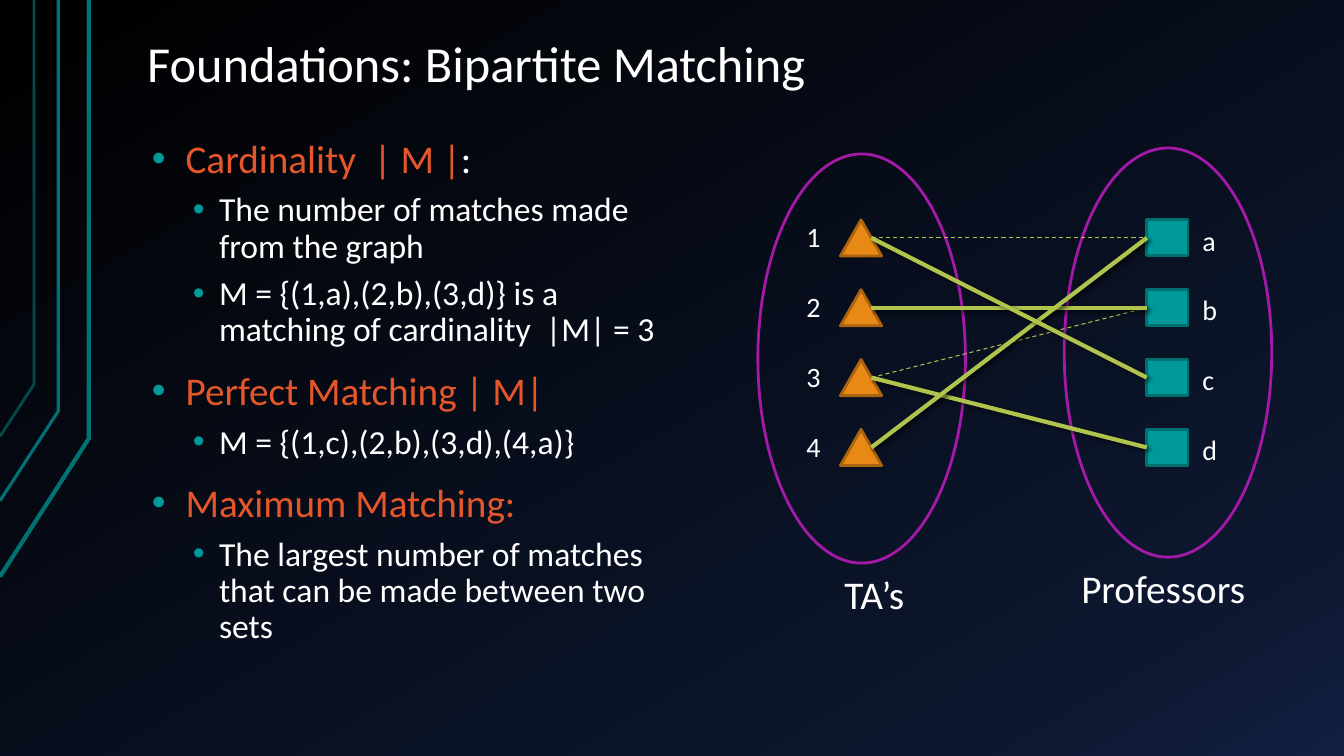
import collections
import copy

import pptx
import pptx.dml.color
import pptx.enum.dml
import pptx.enum.shapes
import pptx.enum.text
import pptx.oxml
import pptx.oxml.ns
import pptx.util
from pptx.util import Cm

Box = collections.namedtuple("Box", "left top width height")
SHAPE = pptx.enum.shapes.MSO_SHAPE
ANCHOR = pptx.enum.text.MSO_ANCHOR
FONT = "Calibri"
WHITE, ORANGE, TEAL, LIME = "FFFFFF", "E5572B", "009999", "AFC34D"

HEADING = dict(level=0, size=28, before=16, margin=0.85, hang=0.85)
DETAIL = dict(level=1, size=24, before=8, margin=1.69, hang=0.66)
POINTS = [
    (HEADING, [("Cardinality  | M |", ORANGE), (":", WHITE)]),
    (DETAIL, [("The number of matches made from the graph", WHITE)]),
    (DETAIL, [("M = {(1,a),(2,b),(3,d)} is a matching of cardinality  |M| = 3", WHITE)]),
    (HEADING, [("Perfect Matching | M|", ORANGE)]),
    (DETAIL, [("M = {(1,c),(2,b),(3,d),(4,a)}", WHITE)]),
    (HEADING, [("Maximum Matching:", ORANGE)]),
    (DETAIL, [("The largest number of matches that can be made between two sets", WHITE)]),
]
POSSIBLE_PAIRS = ["1a", "3b"]
MATCHED_PAIRS = ["2b", "3d", "4a", "1c"]


def rgb(hex_code):
    return pptx.dml.color.RGBColor.from_string(hex_code)


def drawing_xml(body):
    return pptx.oxml.parse_xml(body.replace(">", f" {pptx.oxml.ns.nsdecls('a')}>", 1))


def set_line(item, color, width):
    item.line.color.rgb = rgb(color)
    item.line.width = pptx.util.Pt(width)


def add_run(paragraph, text, size, color):
    run = paragraph.add_run()
    run.text = text
    run.font.name = FONT
    run.font.size = pptx.util.Pt(size)
    run.font.color.rgb = rgb(color)


def add_frame(slide, box, inset=(0.25, 0.13), anchor=ANCHOR.TOP, wrap=True):
    """Add an empty text box and return its text frame."""
    frame = slide.shapes.add_textbox(*map(Cm, box)).text_frame
    frame.word_wrap = wrap
    frame.vertical_anchor = anchor
    frame.margin_left = frame.margin_right = Cm(inset[0])
    frame.margin_top = frame.margin_bottom = Cm(inset[1])
    return frame


def add_text(slide, box, text, size=20, color=WHITE, spacing=1.0, **frame_format):
    paragraph = add_frame(slide, box, **frame_format).paragraphs[0]
    paragraph.line_spacing = spacing
    add_run(paragraph, text, size, color)


def add_node(slide, kind, box, fill, line):
    """Add a preset shape; a fill of None leaves it hollow."""
    node = slide.shapes.add_shape(kind, *map(Cm, box))
    node.shadow.inherit = False
    if fill:
        node.fill.solid()
        node.fill.fore_color.rgb = rgb(fill)
    else:
        node.fill.background()
    set_line(node, line, 2)
    return node


def paint_background(slide):
    fill = slide.background.fill
    fill.gradient()
    fill.gradient_angle = 300
    stop_list = slide.element.find(".//" + pptx.oxml.ns.qn("a:gsLst"))
    stop_list.append(copy.deepcopy(stop_list[-1]))
    colors = [(0, "000000"), (0.85, "0D172F"), (1, "122041")]
    for stop, (position, color) in zip(fill.gradient_stops, colors):
        stop.position = position
        stop.color.rgb = rgb(color)


def draw_edge_lines(slide, box):
    """Draw the three bent lines along the left edge, each ending on that edge."""
    for x, bend, end, color, width in [
        (2.24, 11.05, 14.53, "007272", 3),
        (1.47, 10.36, 12.62, "007272", 2.25),
        (0.86, 9.68, 11.0, "004C4C", 2),
    ]:
        corners = [(Cm(box.left + dx), Cm(box.top + dy))
                   for dx, dy in [(0, end), (x, bend), (x, 0)]]
        builder = slide.shapes.build_freeform(*corners[0])
        builder.add_line_segments(corners[1:], close=False)
        bent_line = builder.convert_to_shape()
        bent_line.shadow.inherit = False
        bent_line.fill.background()
        set_line(bent_line, color, width)


def draw_points(slide, box):
    frame = add_frame(slide, box)
    for index, (style, runs) in enumerate(POINTS):
        paragraph = frame.add_paragraph() if index else frame.paragraphs[0]
        paragraph.level = style["level"]
        paragraph.line_spacing = 0.9
        paragraph.space_before = pptx.util.Pt(style["before"] if index else 0)
        for text, color in runs:
            add_run(paragraph, text, style["size"], color)
        properties = paragraph._p.get_or_add_pPr()
        properties.set("marL", str(Cm(style["margin"])))
        properties.set("indent", str(-Cm(style["hang"])))
        for bullet_part in (
            f'<a:buClr><a:srgbClr val="{TEAL}"/></a:buClr>',
            '<a:buFont typeface="Arial"></a:buFont>',
            '<a:buChar char="•"></a:buChar>',
        ):
            properties.append(drawing_xml(bullet_part))


def connect(slide, assistant, professor, matched):
    """Join a triangle's right slope to the left side of a square."""
    edge = slide.shapes.add_connector(
        pptx.enum.shapes.MSO_CONNECTOR.STRAIGHT,
        assistant.left + assistant.width * 3 // 4,
        assistant.top + assistant.height // 2,
        professor.left, professor.top + professor.height // 2)
    edge.end_connect(professor, 1)
    set_line(edge, LIME, 3 if matched else 0.75)
    shadow = ""
    if matched:
        shadow = ('<a:outerShdw blurRad="38100" dist="25400" dir="2700000">'
                  '<a:srgbClr val="000000"><a:alpha val="60000"/></a:srgbClr></a:outerShdw>')
    else:
        edge.line.dash_style = pptx.enum.dml.MSO_LINE.DASH
    edge._element.spPr.append(drawing_xml(f"<a:effectLst>{shadow}</a:effectLst>"))


def draw_set(slide, box, caption, caption_left, labels, node_left, label_left, label_top, **node):
    """Draw one side of the graph and return its nodes by label."""
    first_top, pitch = 5.54, 1.76
    nodes = {}
    for row, label in enumerate(labels):
        top = first_top + row * pitch
        nodes[label] = add_node(
            slide, box=Box(box.left + node_left, top, 1.04, 0.91), **node)
        add_text(slide, Box(box.left + label_left, top + label_top, 1.27, 1.19), label)
    add_node(slide, SHAPE.OVAL, box, None, "A419A7")
    add_text(slide, Box(box.left + caption_left, box.top + 10.35, 5, 1.5),
             caption, size=28, wrap=False)
    return nodes


def draw_graph(slide, box):
    set_width, set_height = 5.23, 10.31
    nodes = draw_set(
        slide, Box(box.left, box.top + 0.15, set_width, set_height),
        "TA’s", 1.93, "1234", node_left=2.08, label_left=0.97, label_top=-0.13,
        kind=SHAPE.ISOSCELES_TRIANGLE, fill="E98915", line="AA630F")
    nodes |= draw_set(
        slide, Box(box.left + box.width - set_width, box.top, set_width, set_height),
        "Professors", 0.18, "abcd", node_left=2.08, label_left=3.23, label_top=-0.05,
        kind=SHAPE.RECTANGLE, fill=TEAL, line="006F6F")
    for pairs, matched in [(POSSIBLE_PAIRS, False), (MATCHED_PAIRS, True)]:
        for assistant, professor in pairs:
            connect(slide, nodes[assistant], nodes[professor], matched)


def main():
    deck = pptx.Presentation()
    deck.slide_width, deck.slide_height = Cm(33.87), Cm(19.05)
    slide = deck.slides.add_slide(deck.slide_layouts[6])
    paint_background(slide)
    draw_edge_lines(slide, Box(0, 0, 2.24, 14.53))
    add_text(slide, Box(3.38, 0.76, 28.78, 1.78), "Foundations: Bipartite Matching",
             size=36, spacing=0.9, inset=(0.33, 0.18), anchor=ANCHOR.BOTTOM)
    draw_points(slide, Box(3.58, 3.38, 14.1, 13.13))
    draw_graph(slide, Box(19.1, 3.73, 12.95, 11.85))
    deck.save("out.pptx")


if __name__ == "__main__":
    main()
